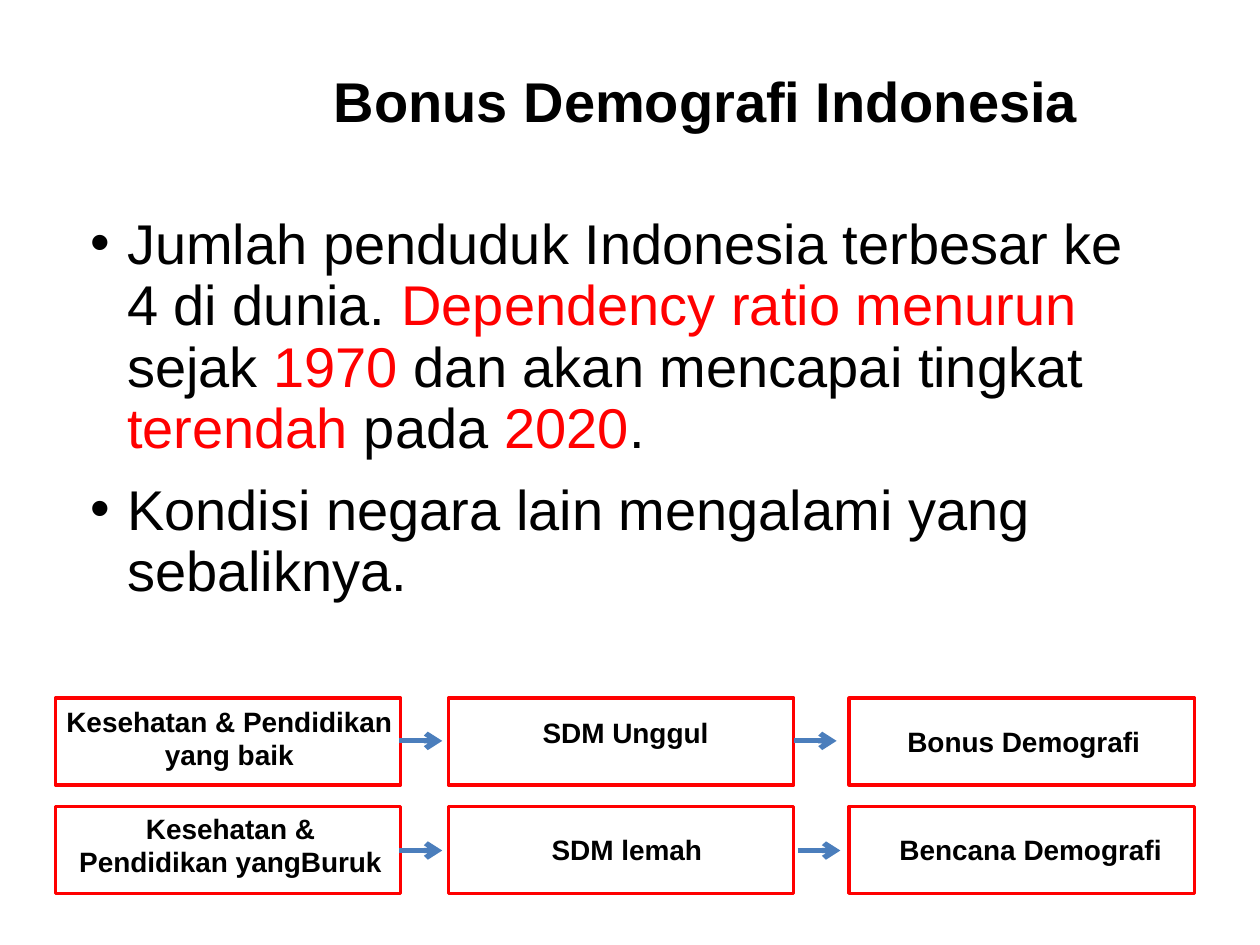
import pptx
import pptx.dml.color
import pptx.enum.shapes
import pptx.enum.text
import pptx.oxml
import pptx.oxml.ns
import pptx.util

RGBColor = pptx.dml.color.RGBColor
BLACK = RGBColor(0x00, 0x00, 0x00)
RED = RGBColor(0xFF, 0x00, 0x00)
BLUE = RGBColor(0x4B, 0x7E, 0xBC)
WHITE = RGBColor(0xFF, 0xFF, 0xFF)

ALIGN = pptx.enum.text.PP_ALIGN
ANCHOR = pptx.enum.text.MSO_ANCHOR
NS = pptx.oxml.ns.nsdecls("a")

# The slide is a grid of 100 columns by 75 rows.
COLUMNS, ROWS = 100, 75
BOX_WIDTH, BOX_HEIGHT = 27.4, 6.9
BOX_LEFTS = (4.4, 35.6, 67.4)
BOX_TOPS = (55.4, 64)

BULLETS = [
    [
        ("Jumlah penduduk Indonesia terbesar ke 4 di dunia. ", BLACK),
        ("Dependency ratio menurun ", RED),
        ("sejak", BLACK),
        (" 1970", RED),
        (" dan akan mencapai tingkat ", BLACK),
        ("terendah", RED),
        (" pada ", BLACK),
        ("2020", RED),
        (".", BLACK),
    ],
    [("Kondisi negara lain mengalami yang sebaliknya.", BLACK)],
]

# Label, left, top, width, height, wraps
LABELS = [
    ("Kesehatan & Pendidikan yang baik", 3.1, 55.4, 30.2, 7.9, True),
    ("SDM Unggul", 42, 56.3, 15.3, 4.6, False),
    ("Bonus Demografi", 70.9, 57, 20.7, 4.6, False),
    ("Kesehatan & Pendidikan yangBuruk", 5, 63.9, 26.6, 7.9, True),
    ("SDM lemah", 42.7, 65.6, 14.1, 4.6, False),
    ("Bencana Demografi", 68.5, 65.6, 26.6, 3.7, True),
]

# Left, height on the slide
ARROWS = [(31.7, 58.8), (31.7, 67.5), (63, 58.8), (63.3, 67.5)]
ARROW_LENGTH = 3.4


def apply(target, values):
    for name, value in values.items():
        setattr(target, name, value)


class DemographySlide:
    heading = {"name": "Arial", "size": pptx.util.Pt(32), "bold": True}
    body = {"name": "Arial", "size": pptx.util.Pt(32), "bold": False}
    label = {"name": "Arial", "size": pptx.util.Pt(16), "bold": True}

    def __init__(self, deck):
        self.column = deck.slide_width / COLUMNS
        self.row = deck.slide_height / ROWS
        self.slide = deck.slides.add_slide(deck.slide_layouts[5])
        self.slide.background.fill.solid()
        self.slide.background.fill.fore_color.rgb = WHITE

    def place(self, left, top, width, height):
        """Turn grid columns and rows into slide lengths."""
        return (round(left * self.column), round(top * self.row),
                round(width * self.column), round(height * self.row))

    def add_words(self, paragraph, words, style, color=BLACK):
        run = paragraph.add_run()
        run.text = words
        apply(run.font, style)
        run.font.color.rgb = color

    def frame(self, holder, anchor, wraps=True):
        apply(holder.text_frame, {
            "word_wrap": wraps,
            "auto_size": pptx.enum.text.MSO_AUTO_SIZE.NONE,
            "vertical_anchor": anchor,
        })
        return holder.text_frame

    def title(self, words, *area):
        heading = self.slide.shapes.title
        sides = ("left", "top", "width", "height")
        apply(heading, dict(zip(sides, self.place(*area))))
        paragraph = self.frame(heading, ANCHOR.TOP).paragraphs[0]
        paragraph.alignment = ALIGN.CENTER
        self.add_words(paragraph, words, self.heading)

    def bullets(self, points, *area):
        holder = self.slide.shapes.add_textbox(*self.place(*area))
        frame = self.frame(holder, ANCHOR.MIDDLE)
        indent = pptx.util.Inches(0.29)
        for index, point in enumerate(points):
            paragraph = frame.add_paragraph() if index else frame.paragraphs[0]
            apply(paragraph, {
                "line_spacing": pptx.util.Pt(35),
                "space_after": pptx.util.Pt(12),
            })
            properties = paragraph._p.get_or_add_pPr()
            properties.set("marL", str(indent))
            properties.set("indent", str(-indent))
            properties.append(pptx.oxml.parse_xml(f'<a:buFont {NS} typeface="Arial"/>'))
            properties.append(pptx.oxml.parse_xml(f'<a:buChar {NS} char="•"/>'))
            for words, color in point:
                self.add_words(paragraph, words, self.body, color)

    def caption(self, words, left, top, width, height, wraps):
        holder = self.slide.shapes.add_textbox(*self.place(left, top, width, height))
        paragraph = self.frame(holder, ANCHOR.TOP, wraps).paragraphs[0]
        paragraph.alignment = ALIGN.CENTER
        self.add_words(paragraph, words, self.label)

    def box(self, left, top):
        outline = self.slide.shapes.add_shape(
            pptx.enum.shapes.MSO_SHAPE.RECTANGLE,
            *self.place(left, top, BOX_WIDTH, BOX_HEIGHT))
        outline.shadow.inherit = False
        outline.fill.background()
        outline.line.color.rgb = RED
        outline.line.width = pptx.util.Pt(2)

    def arrow(self, left, level):
        x, y, length, _ = self.place(left, level, ARROW_LENGTH, 0)
        link = self.slide.shapes.add_connector(
            pptx.enum.shapes.MSO_CONNECTOR.STRAIGHT, x, y, x + length, y)
        link.line.color.rgb = BLUE
        link.line.width = pptx.util.Pt(3)
        link.line._get_or_add_ln().append(
            pptx.oxml.parse_xml(f'<a:tailEnd {NS} type="arrow"/>'))
        link._element.spPr.append(pptx.oxml.parse_xml(f"<a:effectLst {NS}/>"))


def main():
    deck = pptx.Presentation()
    deck.slide_width = pptx.util.Inches(10)
    deck.slide_height = pptx.util.Inches(7.5)

    page = DemographySlide(deck)
    page.bullets(BULLETS, 6.2, 16.4, 87.5, 32.1)
    page.title("Bonus Demografi Indonesia", 16.4, 4.8, 79.3, 6.4)
    for entry in LABELS:
        page.caption(*entry)
    for left in BOX_LEFTS:
        for top in BOX_TOPS:
            page.box(left, top)
    for left, level in ARROWS:
        page.arrow(left, level)

    deck.save("out.pptx")


if __name__ == "__main__":
    main()
